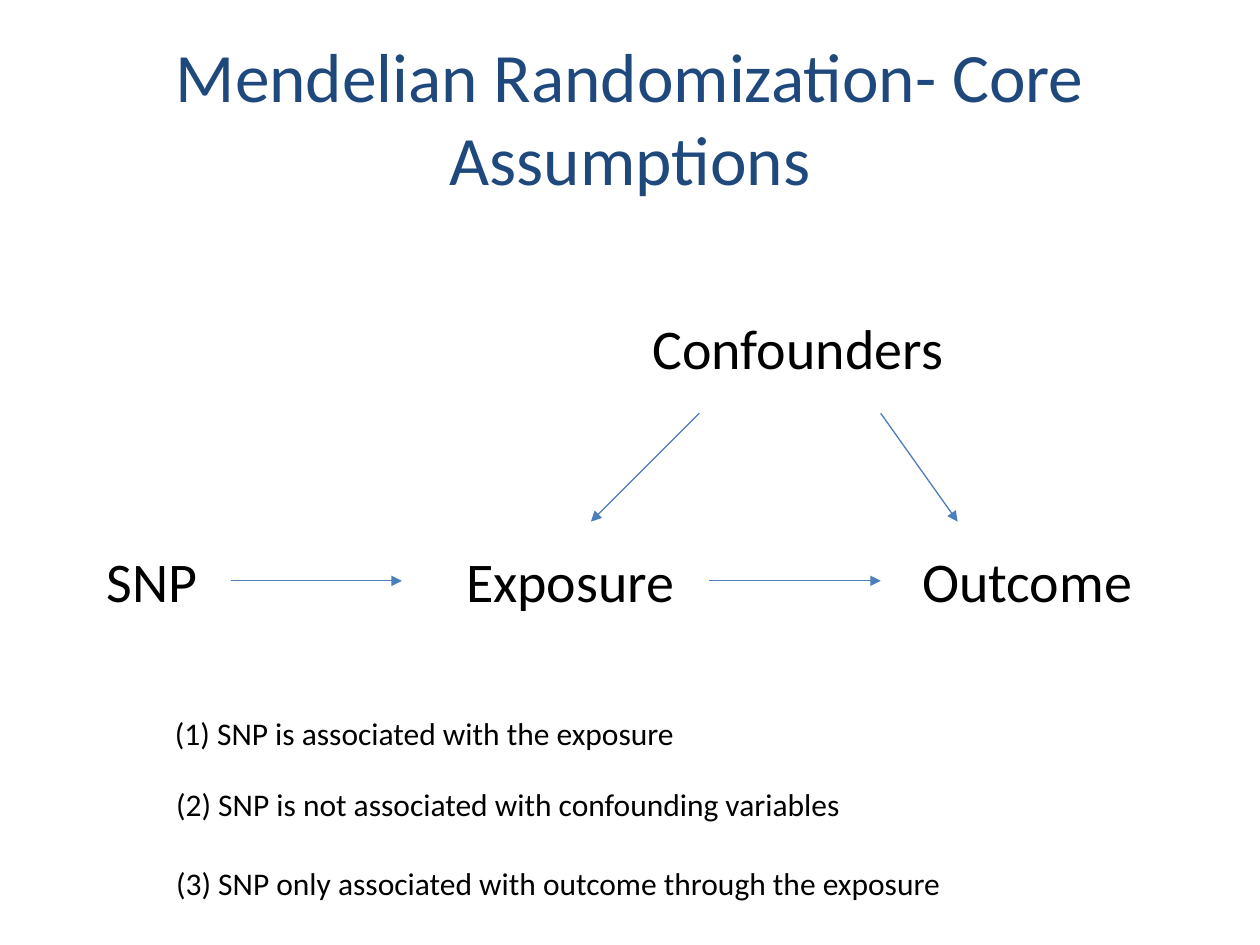
from dataclasses import dataclass

from pptx import Presentation
from pptx.dml.color import RGBColor
from pptx.enum.shapes import MSO_CONNECTOR
from pptx.enum.text import MSO_ANCHOR, MSO_AUTO_SIZE, PP_ALIGN
from pptx.oxml.ns import qn
from pptx.util import Inches, Pt
from lxml.etree import SubElement


@dataclass(frozen=True)
class Theme:
    font: str = "Calibri"
    navy: str = "1F497D"
    ink: str = "000000"
    blue: str = "4B7EBC"
    title: float = 39.6
    node: float = 32
    note: float = 18
    line: float = 0.75


def write(frame, text, *, font, size, color, align=PP_ALIGN.LEFT,
          anchor=MSO_ANCHOR.TOP, wrap=True, fit=MSO_AUTO_SIZE.NONE):
    frame.word_wrap = wrap
    frame.auto_size = fit
    frame.vertical_anchor = anchor
    par = frame.paragraphs[0]
    par.alignment = align
    run = par.add_run()
    run.text = text
    run.font.name = font
    run.font.size = Pt(size)
    run.font.color.rgb = RGBColor.from_string(color)


class Board:
    def __init__(self, slide, theme):
        self.slide = slide
        self.theme = theme

    def text(self, text, box, **style):
        shape = self.slide.shapes.add_textbox(*map(Inches, box))
        write(shape.text_frame, text, font=self.theme.font, **style)

    def title(self, text, box):
        self.text(text, box, size=self.theme.title, color=self.theme.navy,
                  align=PP_ALIGN.CENTER, anchor=MSO_ANCHOR.MIDDLE)

    def node(self, text, left, top, width):
        self.text(text, (left, top, width, 0.64), size=self.theme.node,
                  color=self.theme.ink, fit=MSO_AUTO_SIZE.SHAPE_TO_FIT_TEXT)

    def note(self, text, left, top, width):
        self.text(text, (left, top, width, 0.4), size=self.theme.note,
                  color=self.theme.ink, wrap=False,
                  fit=MSO_AUTO_SIZE.SHAPE_TO_FIT_TEXT)

    def arrow(self, start, end):
        link = self.slide.shapes.add_connector(
            MSO_CONNECTOR.STRAIGHT, *map(Inches, start + end))
        link.line.color.rgb = RGBColor.from_string(self.theme.blue)
        link.line.width = Pt(self.theme.line)
        SubElement(link.line._get_or_add_ln(), qn("a:tailEnd"), type="triangle")
        SubElement(link._element.spPr, qn("a:effectLst"))


def main():
    deck = Presentation()
    deck.slide_width, deck.slide_height = Inches(10), Inches(7.5)
    board = Board(deck.slides.add_slide(deck.slide_layouts[6]), Theme())

    board.title("Mendelian Randomization- Core Assumptions", (0.5, 0.3, 9, 1.25))

    row = 4.29
    for name, left, width in (("SNP", 0.75, 1.08), ("Exposure", 3.6, 1.95),
                              ("Outcome", 7.22, 2.11)):
        board.node(name, left, row, width)
    board.node("Confounders", 5.08, 2.44, 2.74)

    mid = row + 0.32
    for left in (1.83, 5.63):
        board.arrow((left, mid), (left + 1.36, mid))
    for start, end in ((5.55, 4.69), (6.99, 7.6)):
        board.arrow((start, 3.28), (end, 4.14))

    board.note("(1) SNP is associated with the exposure", 1.29, 5.62, 4.21)
    board.note("(2) SNP is not associated with confounding variables",
               1.3, 6.18, 5.53)
    board.note("(3) SNP only associated with outcome through the exposure",
               1.3, 6.81, 6.34)

    deck.save("out.pptx")


if __name__ == "__main__":
    main()
